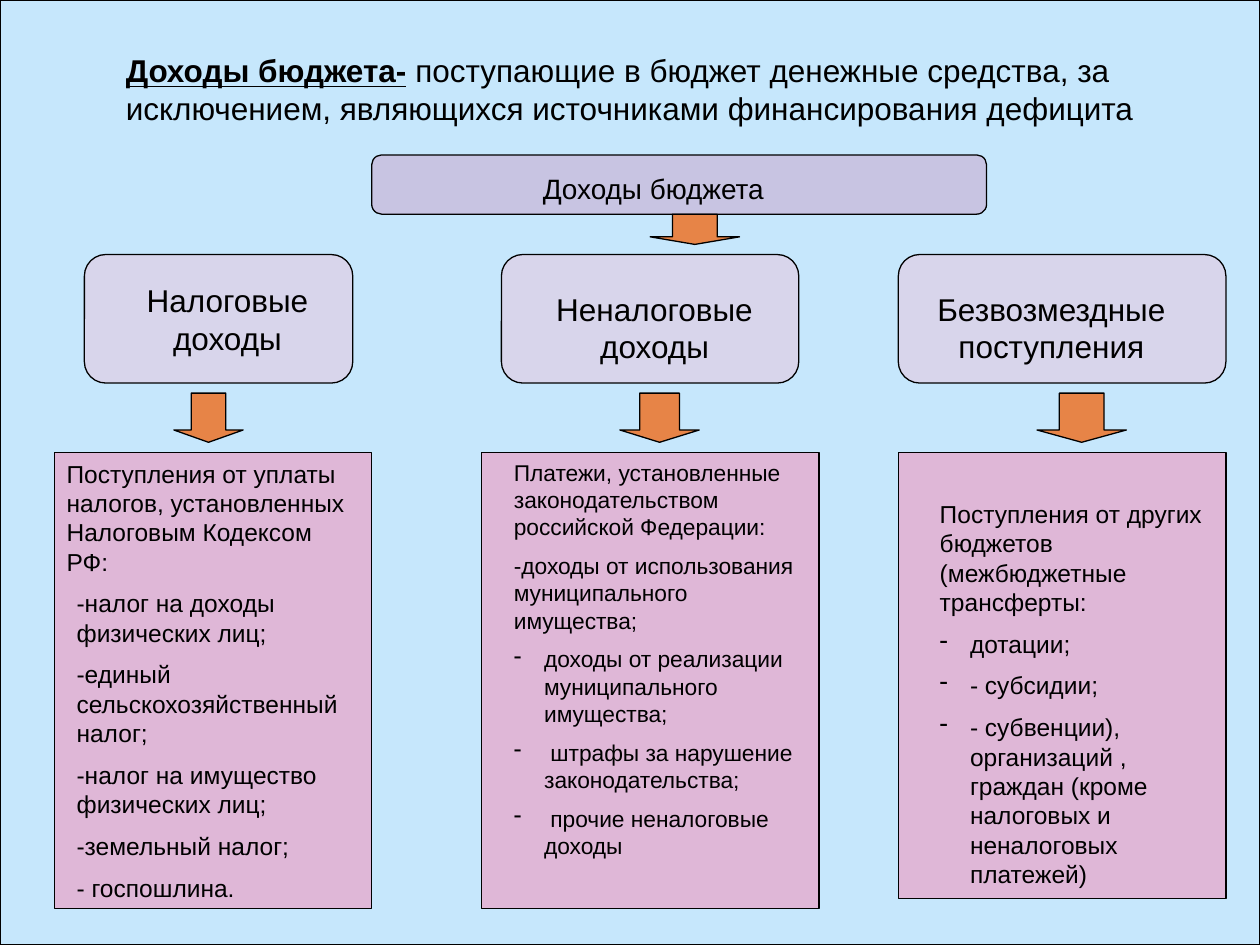
from dataclasses import dataclass

from lxml import etree
from pptx import Presentation
from pptx.dml.color import RGBColor
from pptx.enum.shapes import MSO_SHAPE
from pptx.enum.text import MSO_AUTO_SIZE, PP_ALIGN
from pptx.oxml.ns import qn
from pptx.util import Inches, Pt

RECTANGLE = MSO_SHAPE.RECTANGLE
ROUNDED = MSO_SHAPE.ROUNDED_RECTANGLE
HEADER = MSO_SHAPE.FLOWCHART_ALTERNATE_PROCESS
ARROW = MSO_SHAPE.DOWN_ARROW
LEFT, CENTER = PP_ALIGN.LEFT, PP_ALIGN.CENTER
GROW = MSO_AUTO_SIZE.SHAPE_TO_FIT_TEXT

BLACK = RGBColor(0x00, 0x00, 0x00)
SKY = RGBColor(0xC6, 0xE7, 0xFC)
PINK = RGBColor(0xDF, 0xB7, 0xD7)
LAVENDER = RGBColor(0xD8, 0xD5, 0xEB)
VIOLET = RGBColor(0xC8, 0xC4, 0xE2)
ORANGE = RGBColor(0xE7, 0x84, 0x47)

# The page is a grid of 100 columns by 75 rows.
COLUMNS, ROWS = 100, 75
WIDTH, HEIGHT = Inches(10), Inches(7.5)
BULLET_INDENT = Inches(0.24)


@dataclass
class Area:
    left: float
    top: float
    width: float
    height: float

    def lengths(self) -> list[int]:
        across, down = WIDTH / COLUMNS, HEIGHT / ROWS
        return [round(self.left * across), round(self.top * down),
                round(self.width * across), round(self.height * down)]


@dataclass
class Line:
    text: str
    bullet: bool = False
    lead: str = ""  # bold underlined opening words


@dataclass
class TextBlock:
    area: Area
    lines: list[Line]
    size: int = 14
    align: PP_ALIGN = LEFT
    gap: float = 0.5  # space before, as a share of the text size


@dataclass
class Branch:
    """One kind of income: its name box, arrow and detail panel."""
    name_left: float
    name_width: float
    arrow_left: float
    arrow_width: float
    panel: Area
    texts: list[TextBlock]


def draw_shape(page, kind: MSO_SHAPE, area: Area, fill: RGBColor) -> None:
    shape = page.shapes.add_shape(kind, *area.lengths())
    shape.shadow.inherit = False
    shape.fill.solid()
    shape.fill.fore_color.rgb = fill
    shape.line.color.rgb = BLACK
    shape.line.width = Pt(0.75)
    if kind == ARROW:
        shape.adjustments[0] = 0.5
        shape.adjustments[1] = 0.25


def add_span(para, text: str, size: int, strong: bool = False) -> None:
    span = para.add_run()
    span.text = text
    formats = {"name": "Arial", "size": Pt(size), "bold": strong, "underline": strong}
    for name, value in formats.items():
        setattr(span.font, name, value)
    span.font.color.rgb = BLACK


def add_dash(para) -> None:
    """Give the paragraph a hanging dash bullet."""
    properties = para._p.get_or_add_pPr()
    properties.set("marL", str(BULLET_INDENT))
    properties.set("indent", str(-BULLET_INDENT))
    etree.SubElement(properties, qn("a:buChar")).set("char", "-")


def draw_text(page, block: TextBlock) -> None:
    frame = page.shapes.add_textbox(*block.area.lengths()).text_frame
    frame.word_wrap = True
    frame.auto_size = GROW
    for number, line in enumerate(block.lines):
        para = frame.add_paragraph() if number else frame.paragraphs[0]
        para.alignment = block.align
        para.space_before = Pt(block.size * block.gap)
        if line.bullet:
            add_dash(para)
        if line.lead:
            add_span(para, line.lead, block.size, strong=True)
        add_span(para, line.text, block.size)


def draw_branch(page, branch: Branch) -> None:
    name = Area(branch.name_left, 20.2, branch.name_width, 10.2)
    arrow = Area(branch.arrow_left, 31.2, branch.arrow_width, 3.9)
    draw_shape(page, RECTANGLE, branch.panel, PINK)
    draw_shape(page, ROUNDED, name, LAVENDER)
    draw_shape(page, ARROW, arrow, ORANGE)
    for block in branch.texts:
        draw_text(page, block)


TITLE = TextBlock(Area(9, 3.6, 84.3, 7), [Line(
    " поступающие в бюджет денежные средства, за исключением, "
    "являющихся источниками финансирования дефицита",
    lead="Доходы бюджета-")], 18)
HEADING = TextBlock(Area(42.1, 13.1, 21.3, 3.7), [Line("Доходы бюджета")], 16, gap=0)

BRANCHES = [
    Branch(6.7, 21.3, 13.8, 5.5, Area(4.3, 35.9, 25.2, 36.2), [
        TextBlock(Area(9, 21.8, 18.1, 7), [Line("Налоговые доходы")], 18, CENTER),
        TextBlock(Area(4.3, 35.9, 25.2, 10.3), [
            Line("Поступления от уплаты налогов, установленных Налоговым Кодексом РФ:")]),
        TextBlock(Area(5.1, 46.2, 23.6, 26.6), [
            Line("-налог на доходы физических лиц;"),
            Line("-единый сельскохозяйственный налог;"),
            Line("-налог на имущество физических лиц;"),
            Line("-земельный налог;"),
            Line("- госпошлина.")]),
    ]),
    Branch(39.8, 23.6, 49.2, 6.3, Area(38.2, 35.9, 26.8, 36.2), [
        TextBlock(Area(41.3, 22.5, 21.3, 7), [Line("Неналоговые доходы")], 18, CENTER),
        TextBlock(Area(39.8, 35.9, 25.2, 33.6), [
            Line("Платежи, установленные законодательством российской Федерации:"),
            Line("-доходы от использования муниципального имущества;"),
            Line("доходы от реализации муниципального имущества;", bullet=True),
            Line(" штрафы за нарушение законодательства;", bullet=True),
            Line(" прочие неналоговые доходы", bullet=True)], 13),
    ]),
    Branch(71.3, 26, 82.3, 7.1, Area(71.3, 35.9, 26, 35.4), [
        TextBlock(Area(72.8, 22.5, 21.3, 7), [Line("Безвозмездные поступления")], 18, CENTER),
        TextBlock(Area(73.6, 39.1, 22.8, 30.1), [
            Line("Поступления от других бюджетов (межбюджетные трансферты:"),
            Line("дотации;", bullet=True),
            Line("- субсидии;", bullet=True),
            Line("- субвенции), организаций , граждан (кроме налоговых "
                 "и неналоговых платежей)", bullet=True)]),
    ]),
]


def main() -> None:
    deck = Presentation()
    deck.slide_width, deck.slide_height = WIDTH, HEIGHT
    page = deck.slides.add_slide(deck.slide_layouts[6])
    draw_shape(page, RECTANGLE, Area(0, 0, COLUMNS, ROWS), SKY)
    draw_text(page, TITLE)
    draw_shape(page, HEADER, Area(29.5, 12.3, 48.8, 4.7), VIOLET)
    draw_text(page, HEADING)
    draw_shape(page, ARROW, Area(51.6, 17, 7.1, 2.4), ORANGE)
    for branch in BRANCHES:
        draw_branch(page, branch)
    deck.save("out.pptx")


if __name__ == "__main__":
    main()
